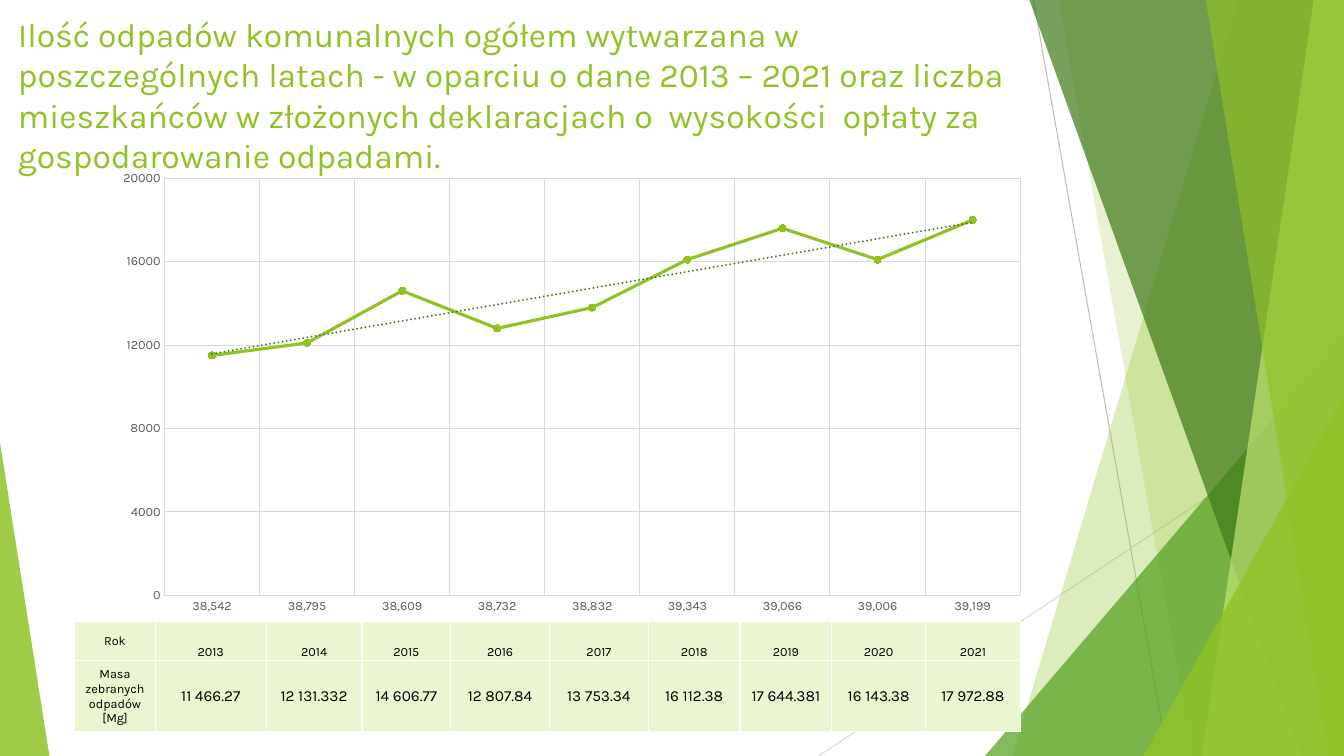
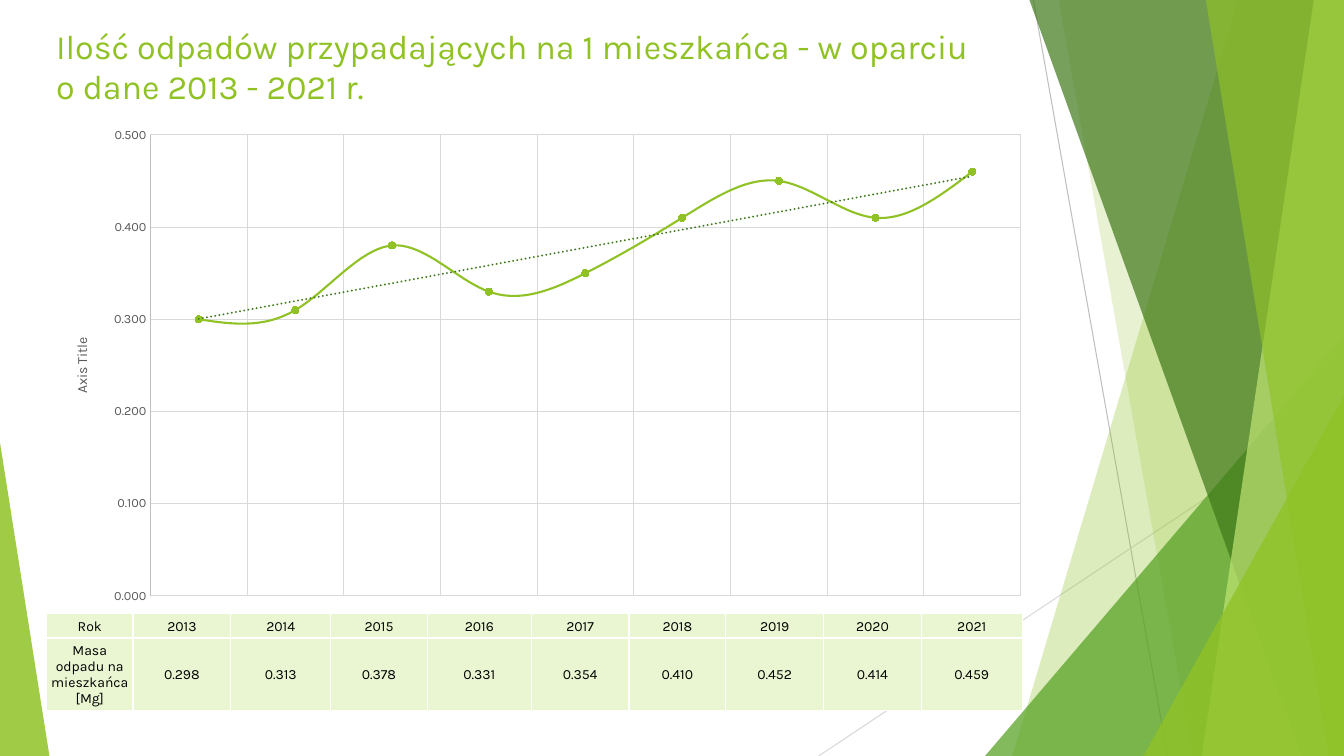
from lxml.etree import SubElement
from pptx import Presentation
from pptx.chart.data import CategoryChartData
from pptx.dml.color import RGBColor
from pptx.enum.chart import XL_CHART_TYPE as ChartKind, XL_MARKER_STYLE as Marker
from pptx.enum.chart import XL_TICK_MARK as Tick
from pptx.enum.shapes import MSO_CONNECTOR as Connector, MSO_SHAPE as Preset
from pptx.enum.text import MSO_ANCHOR as Anchor, PP_ALIGN as Align
from pptx.oxml import parse_xml
from pptx.oxml.ns import nsdecls, qn
from pptx.util import Inches, Pt

LIME = RGBColor(0x90, 0xC2, 0x26)
GREEN = RGBColor(0x54, 0xA0, 0x21)
FOREST = RGBColor(0x3F, 0x78, 0x19)
PALE_LIME = RGBColor(0xC0, 0xE4, 0x74)
CELL = RGBColor(0xEA, 0xF6, 0xD1)
WHITE = RGBColor(0xFF, 0xFF, 0xFF)
BLACK = RGBColor(0, 0, 0)
LABEL = RGBColor(0x59, 0x59, 0x59)
GRID = RGBColor(0xD9, 0xD9, 0xD9)
RULE = RGBColor(0xBF, 0xBF, 0xBF)
FONT = "Karla"
WIDTH, HEIGHT = 13.33, 7.5
YEARS = [str(year) for year in range(2013, 2022)]


def inches(box):
    return [Inches(length) for length in box]


def style_font(font, size, color):
    font.name = FONT
    font.size = Pt(size)
    font.color.rgb = color


def style_line(line, color, width):
    line.color.rgb = color
    line.width = Pt(width)


def fill_facet(shape, color, opacity):
    shape.shadow.inherit = False
    shape.line.fill.background()
    shape.fill.solid()
    shape.fill.fore_color.rgb = color
    tint = shape.fill._xPr.find(qn("a:solidFill"))[0]
    SubElement(tint, qn("a:alpha"), val=str(opacity * 1000))


def add_ray(page, start, end, color):
    ray = page.shapes.add_connector(Connector.STRAIGHT, *inches(start + end))
    style_line(ray.line, color, 0.75)
    SubElement(ray._element.spPr, qn("a:effectLst"))


def add_band(page, top_left, bottom_left, color, opacity):
    outline = page.shapes.build_freeform(Inches(top_left), 0)
    corners = [(WIDTH, 0), (WIDTH, HEIGHT), (bottom_left, HEIGHT)]
    outline.add_line_segments([inches(corner) for corner in corners])
    fill_facet(outline.convert_to_shape(), color, opacity)


def add_wedge(page, left, top, right, tip, color, opacity):
    box = (left, top, right - left, HEIGHT - top)
    wedge = page.shapes.add_shape(Preset.ISOSCELES_TRIANGLE, *inches(box))
    wedge.adjustments[0] = tip
    fill_facet(wedge, color, opacity)


def add_backdrop(page):
    add_ray(page, (10.25, 0), (11.58, HEIGHT), RULE)
    add_ray(page, (WIDTH, 4.03), (8.12, HEIGHT), GRID)
    add_band(page, 12.28, 10.04, LIME, 30)
    add_band(page, 10.5, 11.83, LIME, 20)
    add_wedge(page, 9.77, 3.33, WIDTH, 1, GREEN, 72)
    add_band(page, 10.21, 12.91, FOREST, 70)
    add_band(page, 13.03, 11.92, PALE_LIME, 70)
    add_band(page, 11.96, 13.18, LIME, 65)
    add_wedge(page, 11.34, 3.93, WIDTH, 1, LIME, 80)
    add_wedge(page, 0, 4.39, 0.49, 0, LIME, 85)


def add_title(page, box, text, size):
    frame = page.shapes.add_textbox(*inches(box)).text_frame
    frame.word_wrap = True
    span = frame.paragraphs[0].add_run()
    span.text = text
    style_font(span.font, size, LIME)


def place_plot(chart, plot_box):
    area = chart._chartSpace.chart.plotArea
    for layout in area.findall(qn("c:layout")):
        area.remove(layout)
    layout = parse_xml(f'<c:layout {nsdecls("c")}><c:manualLayout/></c:layout>')
    area.insert(0, layout)
    settings = [("layoutTarget", "inner"), ("xMode", "edge"), ("yMode", "edge")]
    settings += zip("xywh", plot_box)
    for name, value in settings:
        SubElement(layout[0], qn(f"c:{name}"), val=str(value))


def add_trend(series):
    trend = parse_xml(
        f'<c:trendline {nsdecls("c", "a")}><c:spPr><a:ln w="{Pt(1.5)}" cap="rnd">'
        f'<a:solidFill><a:srgbClr val="{FOREST}"/></a:solidFill>'
        '<a:prstDash val="sysDot"/></a:ln></c:spPr>'
        '<c:trendlineType val="linear"/><c:dispRSqr val="0"/><c:dispEq val="0"/>'
        '</c:trendline>')
    series._element.find(qn("c:cat")).addprevious(trend)


def style_axis(axis):
    axis.major_tick_mark = axis.minor_tick_mark = Tick.NONE
    axis.has_major_gridlines = True
    style_line(axis.major_gridlines.format.line, GRID, 0.75)
    style_font(axis.tick_labels.font, 9, LABEL)
    axis.format.line.fill.background()


def add_trend_chart(page, box, plot_box, categories, values, top, step, number_format,
                    line_width, smooth=False):
    data = CategoryChartData(number_format=number_format)
    data.categories = categories
    data.add_series("Series 1", values)
    chart = page.shapes.add_chart(ChartKind.LINE_MARKERS, *inches(box), data).chart
    chart.has_legend = chart.has_title = False
    style_font(chart.font, 10, BLACK)
    place_plot(chart, plot_box)
    chart.plots[0].vary_by_categories = False

    series = chart.plots[0].series[0]
    series.smooth = smooth
    style_line(series.format.line, LIME, line_width)
    series.marker.style = Marker.CIRCLE
    series.marker.size = 5
    series.marker.format.fill.solid()
    series.marker.format.fill.fore_color.rgb = LIME
    series.marker.format.line.color.rgb = LIME
    add_trend(series)

    for axis in (chart.category_axis, chart.value_axis):
        style_axis(axis)
    scale = chart.value_axis
    scale.minimum_scale, scale.maximum_scale, scale.major_unit = 0, top, step
    scale.tick_labels.number_format = number_format
    scale.tick_labels.number_format_is_linked = False
    return chart


def add_cell_borders(cell):
    properties = cell._tc.get_or_add_tcPr()
    for position, side in enumerate(("lnL", "lnR", "lnT", "lnB")):
        properties.insert(position, parse_xml(
            f'<a:{side} {nsdecls("a")} w="{Pt(1)}"><a:solidFill>'
            f'<a:srgbClr val="{WHITE}"/></a:solidFill></a:{side}>'))


def fill_cell(cell, text, size, anchor):
    cell.fill.solid()
    cell.fill.fore_color.rgb = CELL
    cell.margin_left = cell.margin_right = cell.margin_top = Inches(0.01)
    cell.margin_bottom = 0
    cell.vertical_anchor = anchor
    para = cell.text_frame.paragraphs[0]
    para.alignment = Align.CENTER
    span = para.add_run()
    span.text = text
    style_font(span.font, size, BLACK)
    add_cell_borders(cell)


def add_year_table(page, left, top, widths, heights, label, values, label_size, value_size,
                   year_anchor):
    box = (left, top, sum(widths), sum(heights))
    table = page.shapes.add_table(2, len(widths), *inches(box)).table
    table.first_row = table.horz_banding = False
    for column, width in zip(table.columns, widths):
        column.width = Inches(width)
    for row, height in zip(table.rows, heights):
        row.height = Inches(height)
    for column, text in enumerate(["Rok"] + YEARS):
        fill_cell(table.cell(0, column), text, label_size,
                  year_anchor if column else Anchor.MIDDLE)
    for column, text in enumerate([label] + values):
        fill_cell(table.cell(1, column), text, value_size if column else label_size,
                  Anchor.MIDDLE)


def build_total_page(page):
    masses = ["11 466.27", "12 131.332", "14 606.77", "12 807.84", "13 753.34",
              "16 112.38", "17 644.381", "16 143.38", "17 972.88"]
    residents = ["38,542", "38,795", "38,609", "38,732", "38,832",
                 "39,343", "39,066", "39,006", "39,199"]
    add_title(page, (0.08, 0.09, 10.23, 1.44),
              "Ilość odpadów komunalnych ogółem wytwarzana w poszczególnych latach - "
              "w oparciu o dane 2013 – 2021 oraz liczba mieszkańców w złożonych "
              "deklaracjach o  wysokości  opłaty za gospodarowanie odpadami.", 24)
    add_trend_chart(page, (1.16, 1.44, 9.43, 4.7), (0.05, 0.07, 0.9, 0.88), residents,
                    [11500, 12100, 14600, 12800, 13800, 16100, 17600, 16100, 18000],
                    20000, 4000, "0", 2.25)
    add_year_table(page, 0.74, 6.16,
                   [0.8, 1.1, 0.95, 0.88, 0.98, 0.98, 0.91, 0.91, 0.93, 0.94],
                   [0.39, 0.71], "Masa zebranych odpadów [Mg]", masses, 9, 11,
                   Anchor.BOTTOM)


def build_resident_page(page):
    masses = ["0.298", "0.313", "0.378", "0.331", "0.354",
              "0.410", "0.452", "0.414", "0.459"]
    add_title(page, (0.46, 0.2, 9.4, 1.44),
              "Ilość odpadów przypadających na 1 mieszkańca - w oparciu "
              "o dane 2013 - 2021 r.", 24.3)
    chart = add_trend_chart(page, (0.51, 1.19, 9.81, 4.92), (0.1, 0.03, 0.88, 0.93),
                            [str(number) for number in range(1, 10)],
                            [0.3, 0.31, 0.38, 0.33, 0.35, 0.41, 0.45, 0.41, 0.46],
                            0.5, 0.1, "0.000", 1.5, smooth=True)
    chart.category_axis.visible = False
    style_line(chart.value_axis.format.line, RULE, 0.75)
    span = chart.value_axis.axis_title.text_frame.paragraphs[0].add_run()
    span.text = "Axis Title"
    style_font(span.font, 10, LABEL)
    span.font.bold = False
    add_year_table(page, 0.46, 6.09,
                   [0.86, 0.97, 0.99, 0.96, 1.03, 0.97, 0.96, 0.97, 0.97, 1],
                   [0.24, 0.72], "Masa odpadu na mieszkańca [Mg]", masses, 10, 10,
                   Anchor.MIDDLE)


def main():
    deck = Presentation()
    deck.slide_width, deck.slide_height = Inches(WIDTH), Inches(HEIGHT)
    for build_page in (build_total_page, build_resident_page):
        page = deck.slides.add_slide(deck.slide_layouts[6])
        add_backdrop(page)
        build_page(page)
    deck.save("out.pptx")


if __name__ == "__main__":
    main()
